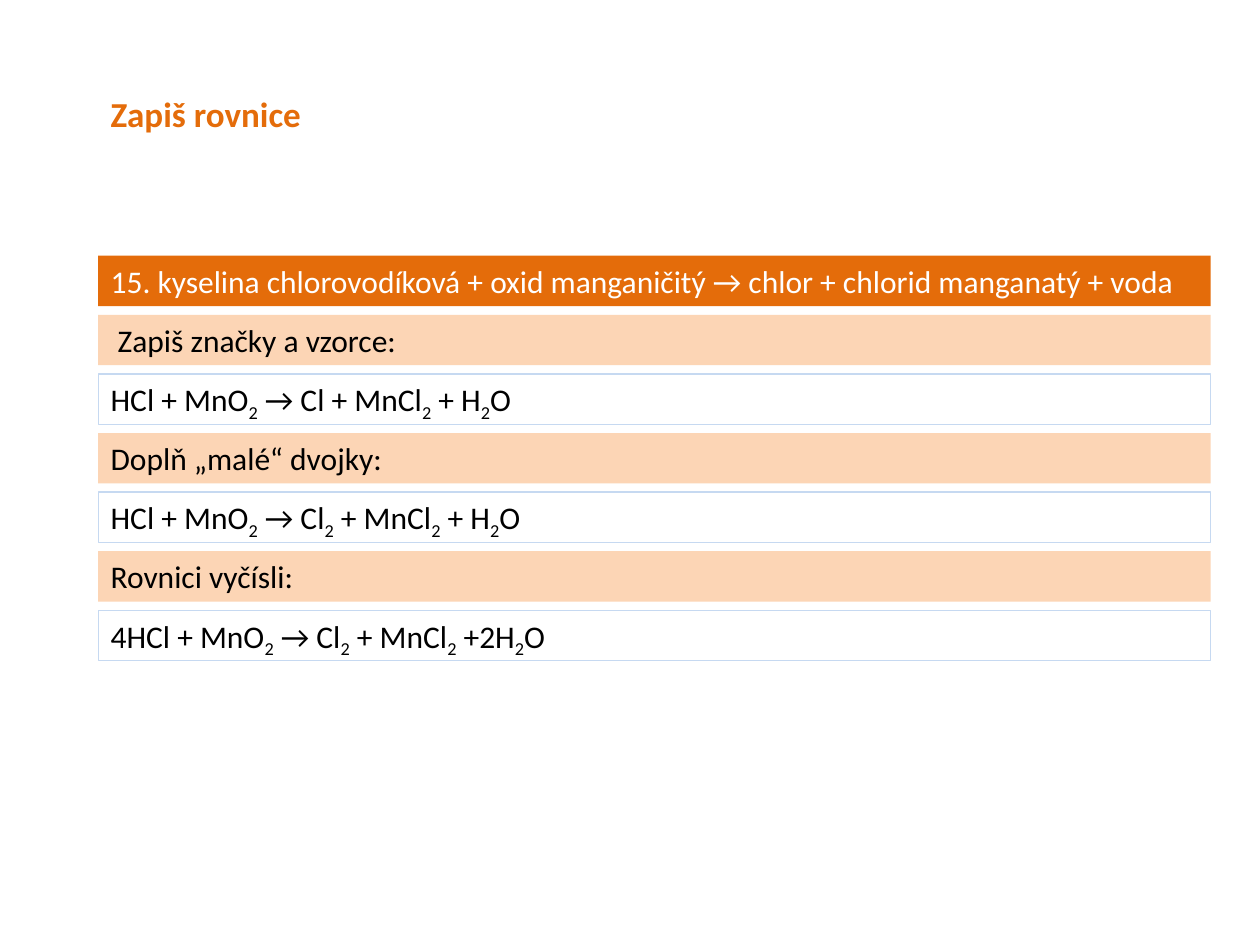
from pptx import Presentation
from pptx.dml.color import RGBColor
from pptx.enum.shapes import MSO_SHAPE as SHAPE
from pptx.enum.text import MSO_ANCHOR as ANCHOR, MSO_AUTO_SIZE as AUTO_SIZE, PP_ALIGN as ALIGN
from pptx.util import Inches, Pt

ORANGE, PEACH, BLUE = "E46C0A", "FCD5B5", "C6D9F1"
WHITE, BLACK = "FFFFFF", "000000"
LEFT, TOP, WIDTH, HEIGHT, PITCH = 0.78, 2.03, 8.83, 0.4, 0.469

# Text, fill, line, text colour; "_" puts the next character in subscript
ROWS = [
    ("15. kyselina chlorovodíková + oxid manganičitý → chlor + chlorid manganatý + voda",
     ORANGE, None, WHITE),
    (" Zapiš značky a vzorce:", PEACH, None, BLACK),
    ("HCl + MnO_2 → Cl + MnCl_2 + H_2O", None, BLUE, BLACK),
    ("Doplň „malé“ dvojky:", PEACH, None, BLACK),
    ("HCl + MnO_2 → Cl_2 + MnCl_2 + H_2O", None, BLUE, BLACK),
    ("Rovnici vyčísli:", PEACH, None, BLACK),
    ("4HCl + MnO_2 → Cl_2 + MnCl_2 +2H_2O", None, BLUE, BLACK),
]


def rgb(value):
    return RGBColor.from_string(value)


def add_run(p, text, size, color, bold=False, subscript=False):
    r = p.add_run()
    r.text = text
    r.font.name = "Calibri"
    r.font.size = Pt(size)
    r.font.bold = bold
    r.font.color.rgb = rgb(color)
    if subscript:
        r._r.get_or_add_rPr().set("baseline", "-25000")


def add_formula(p, formula, size, color):
    first, *others = formula.split("_")
    add_run(p, first, size, color)
    for part in others:
        add_run(p, part[0], size, color, subscript=True)
        add_run(p, part[1:], size, color)


def add_title(slide, text):
    box = slide.shapes.add_textbox(Inches(LEFT), Inches(0.7), Inches(3.83), Inches(HEIGHT))
    tf = box.text_frame
    tf.word_wrap = True
    tf.vertical_anchor = ANCHOR.MIDDLE
    add_run(tf.paragraphs[0], text, 20, ORANGE, bold=True)


def add_row(slide, top, text, fill, line, color):
    s = slide.shapes.add_shape(SHAPE.RECTANGLE, Inches(LEFT), Inches(top),
                               Inches(WIDTH), Inches(HEIGHT))
    s.shadow.inherit = False
    if fill:
        s.fill.solid()
        s.fill.fore_color.rgb = rgb(fill)
    else:
        s.fill.background()
    if line:
        s.line.color.rgb = rgb(line)
        s.line.width = Pt(0.75)
    else:
        s.line.fill.background()
    tf = s.text_frame
    tf.word_wrap = True
    tf.auto_size = AUTO_SIZE.SHAPE_TO_FIT_TEXT
    tf.vertical_anchor = ANCHOR.TOP
    p = tf.paragraphs[0]
    p.alignment = ALIGN.LEFT
    add_formula(p, text, 18, color)


def main():
    prs = Presentation()
    prs.slide_width, prs.slide_height = Inches(10), Inches(7.5)
    slide = prs.slides.add_slide(prs.slide_layouts[6])

    # Heading
    add_title(slide, "Zapiš rovnice")

    # Evenly spaced task and answer rows
    for i, row in enumerate(ROWS):
        add_row(slide, TOP + i * PITCH, *row)

    prs.save("out.pptx")


if __name__ == "__main__":
    main()
